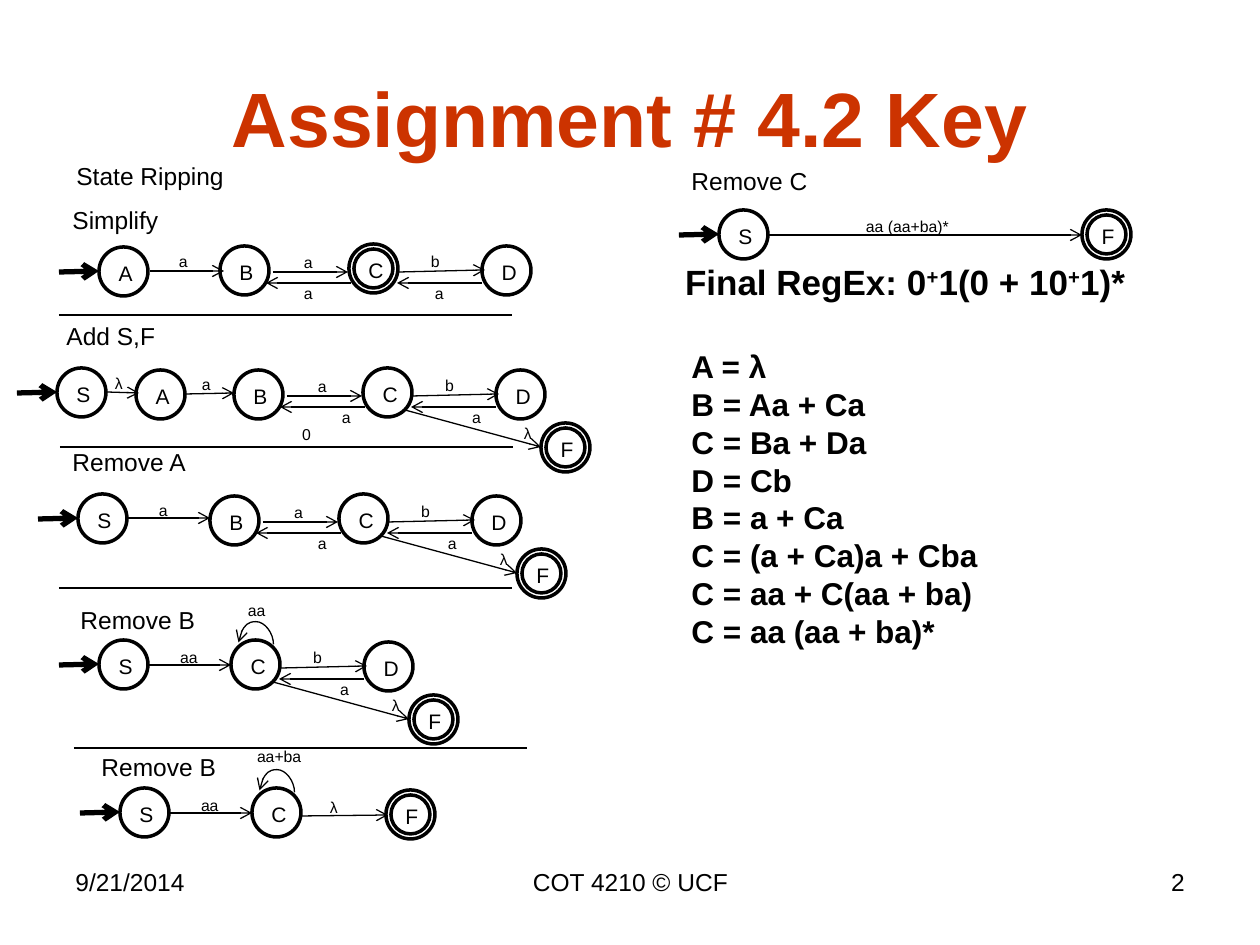
from pptx import Presentation
from pptx.dml.color import RGBColor
from pptx.enum.shapes import MSO_CONNECTOR, MSO_SHAPE
from pptx.enum.text import MSO_ANCHOR, PP_ALIGN
from pptx.oxml.ns import qn
from pptx.oxml.xmlchemy import OxmlElement
from pptx.util import Emu, Pt

LEFT, CENTER, RIGHT = PP_ALIGN.LEFT, PP_ALIGN.CENTER, PP_ALIGN.RIGHT
TOP, MIDDLE = MSO_ANCHOR.TOP, MSO_ANCHOR.MIDDLE
STRAIGHT, CURVE = MSO_CONNECTOR.STRAIGHT, MSO_CONNECTOR.CURVE
OVAL = MSO_SHAPE.OVAL

EMU_PER_PX = 914400 / 126
COLORS = {"ink": "000000", "title": "CC3300"}
FONT = "Arial"
STATE_SIZE, INNER_SIZE, INNER_OFFSET = 49, 39, 5
LABEL_WIDTHS = {"λ": 8, "aa": 20, "aa+ba": 58, "aa (aa+ba)*": 84}

HEADINGS = [
    ("State Ripping", 64, 155, 198),
    ("Simplify", 60, 199, 146),
    ("Add S,F", 54, 315, 146),
    ("Remove A", 60, 441, 146),
    ("Remove B", 68, 599, 146),
    ("Remove B", 89, 746, 146),
    ("Remove C", 679, 160, 146),
]
FOOTERS = [
    ("9/21/2014", 63, 294, LEFT),
    ("COT 4210 © UCF", 431, 399, CENTER),
    ("2", 903, 294, RIGHT),
]
DIVIDERS = [(59, 315), (60, 447), (59, 588), (74, 748)]
DIVIDER_WIDTH = 453
EQUATIONS = [
    "A = λ", "B = Aa + Ca", "C = Ba + Da", "D = Cb", "B = a + Ca",
    "C = (a + Ca)a + Cba", "C = aa + C(aa + ba)", "C = aa (aa + ba)*",
]
FINAL_REGEX = [("Final RegEx: 0", 0), ("+", 30000), ("1(0 + 10", 0),
               ("+", 30000), ("1)*", 0)]


def px(*lengths):
    return [Emu(round(length * EMU_PER_PX)) for length in lengths]


def style_font(font, size, bold=False, color="ink"):
    for name, value in {"name": FONT, "size": Pt(size), "bold": bold}.items():
        setattr(font, name, value)
    font.color.rgb = RGBColor.from_string(COLORS[color])


def style_line(line, width):
    line.color.rgb = RGBColor.from_string(COLORS["ink"])
    line.width = Pt(width)


def add_text(page, lines, area, size, align=LEFT, anchor=TOP, inset=True,
             **font_format):
    """Each line is a string or a list of (text, baseline) spans."""
    frame = page.shapes.add_textbox(*px(*area)).text_frame
    frame.word_wrap = True
    frame.vertical_anchor = anchor
    if not inset:
        for side in ("left", "top", "right", "bottom"):
            setattr(frame, f"margin_{side}", 0)
    for index, line in enumerate(lines):
        para = frame.add_paragraph() if index else frame.paragraphs[0]
        para.alignment = align
        for text, baseline in [(line, 0)] if isinstance(line, str) else line:
            span = para.add_run()
            span.text = text
            style_font(span.font, size, **font_format)
            if baseline:
                span.font._element.set("baseline", str(baseline))


def add_label(page, text, x, y):
    area = (x, y, LABEL_WIDTHS.get(text, 9), 19)
    add_text(page, [text], area, 9, anchor=MIDDLE, inset=False)


def add_line(page, start, end, width=0.75, arrow=True, kind=STRAIGHT):
    line = page.shapes.add_connector(kind, *px(*start, *end))
    style_line(line.line, width)
    line._element.spPr.append(OxmlElement("a:effectLst"))
    if arrow:
        head = OxmlElement("a:tailEnd")
        head.set("type", "arrow")
        line.line._get_or_add_ln().append(head)
    return line


def add_circle(page, x, y, size):
    circle = page.shapes.add_shape(OVAL, *px(x, y, size, size))
    circle.shadow.inherit = False
    circle.fill.background()
    style_line(circle.line, 2)
    return circle


def add_state(page, name, x, y, final=False):
    frame = add_circle(page, x, y, STATE_SIZE).text_frame
    frame.vertical_anchor = TOP
    para = frame.paragraphs[0]
    para.alignment = LEFT
    span = para.add_run()
    span.text = name
    style_font(span.font, 12)
    if final:
        add_circle(page, x + INNER_OFFSET, y + INNER_OFFSET, INNER_SIZE)


def add_start_state(page, name, x, y):
    add_line(page, (x - 40, y + 25), (x, y + 24), width=3)
    add_state(page, name, x, y)


def add_edge(page, text, start, end, label_at):
    add_line(page, start, end)
    add_label(page, text, *label_at)


def add_edges_from(page, x, y, edges):
    """Edges whose points are measured from the corner of a state."""
    for text, *points in edges:
        add_edge(page, text, *[(x + dx, y + dy) for dx, dy in points])


def add_b_and_c(page, x, y, back_label=-21, final=False):
    """State C at x, y, with B to its left."""
    add_state(page, "B", x - 129, y + 2)
    add_state(page, "C", x, y, final)
    add_edges_from(page, x, y, [
        ("a", (-76, 28), (-1, 28), (-45, 9)),
        ("a", (2, 39), (-83, 39), (back_label, 40)),
    ])


def add_d(page, x, y, back_label=109):
    """State D to the right of a C at x, y."""
    add_state(page, "D", x + 133, y + 2)
    add_edges_from(page, x, y, [
        ("b", (50, 28), (136, 26), (82, 8)),
        ("a", (133, 39), (48, 39), (back_label, 40)),
    ])


def add_f_branch(page, x, y):
    """Final state F below and right of a C at x, y."""
    add_state(page, "F", x + 178, y + 55, final=True)
    add_edges_from(page, x, y, [("λ", (42, 42), (178, 79), (161, 56))])


def add_loop(page, text, x, y, label_at):
    """Arc over a state at x, y that leads back to it."""
    arc = add_line(page, (x + 24, y - 14), (x + 26, y + 21), kind=CURVE)
    properties = arc._element.spPr
    frame = properties.find(qn("a:xfrm"))
    frame.set("rot", "16200000")
    frame.set("flipV", "1")
    guide = OxmlElement("a:gd")
    guide.set("name", "adj1")
    guide.set("fmla", "val 1150000")
    properties.find(qn("a:prstGeom")).get_or_add_avLst().append(guide)
    add_label(page, text, *label_at)


def add_s_and_looped_c(page, x, y, loop_text, loop_label_at):
    add_start_state(page, "S", x, y)
    add_state(page, "C", x + 132, y)
    add_edges_from(page, x, y, [("aa", (50, 25), (132, 25), (81, 8))])
    add_loop(page, loop_text, x + 132, y, loop_label_at)


def add_automata(page):
    # Simplify
    add_start_state(page, "A", 99, 247)
    add_edge(page, "a", (150, 271), (224, 271), (179, 252))
    add_b_and_c(page, 349, 244, back_label=-45, final=True)
    add_d(page, 349, 244, back_label=86)
    # Add S,F
    add_start_state(page, "S", 57, 368)
    add_state(page, "A", 136, 370)
    add_edge(page, "λ", (107, 392), (139, 393), (115, 374))
    add_edge(page, "a", (186, 394), (234, 393), (202, 375))
    add_label(page, "0", 302, 425)
    # Remove A
    add_start_state(page, "S", 78, 494)
    add_edge(page, "a", (127, 518), (210, 518), (159, 501))
    for x, y in [(363, 368), (339, 494)]:
        add_b_and_c(page, x, y)
        add_d(page, x, y)
        add_f_branch(page, x, y)
    # Remove B
    add_s_and_looped_c(page, 99, 640, "aa", (248, 601))
    add_d(page, 231, 640)
    add_f_branch(page, 231, 640)
    add_s_and_looped_c(page, 120, 788, "aa+ba", (257, 747))
    add_state(page, "F", 386, 790, final=True)
    add_edge(page, "λ", (301, 816), (388, 815), (330, 798))
    # Remove C
    add_start_state(page, "S", 719, 210)
    add_state(page, "F", 1082, 210, final=True)
    add_edge(page, "aa (aa+ba)*", (769, 235), (1082, 235), (866, 217))


def main():
    deck = Presentation()
    deck.slide_width, deck.slide_height = px(1260, 945)
    page = deck.slides.add_slide(deck.slide_layouts[6])
    add_text(page, ["Assignment # 4.2 Key"], (63, 38, 1134, 158), 44,
             CENTER, MIDDLE, bold=True, color="title")
    for text, x, y, width in HEADINGS:
        add_text(page, [text], (x, y, width, 43), 14)
    for text, x, width, align in FOOTERS:
        add_text(page, [text], (x, 861, width, 66), 14, align)
    for x, y in DIVIDERS:
        add_line(page, (x, y), (x + DIVIDER_WIDTH, y), arrow=False)
    add_automata(page)
    add_text(page, [FINAL_REGEX], (679, 260, 452, 43), 20, CENTER, MIDDLE,
             inset=False, bold=True)
    add_text(page, EQUATIONS, (679, 341, 496, 318), 18, bold=True)
    deck.save("out.pptx")


if __name__ == "__main__":
    main()
